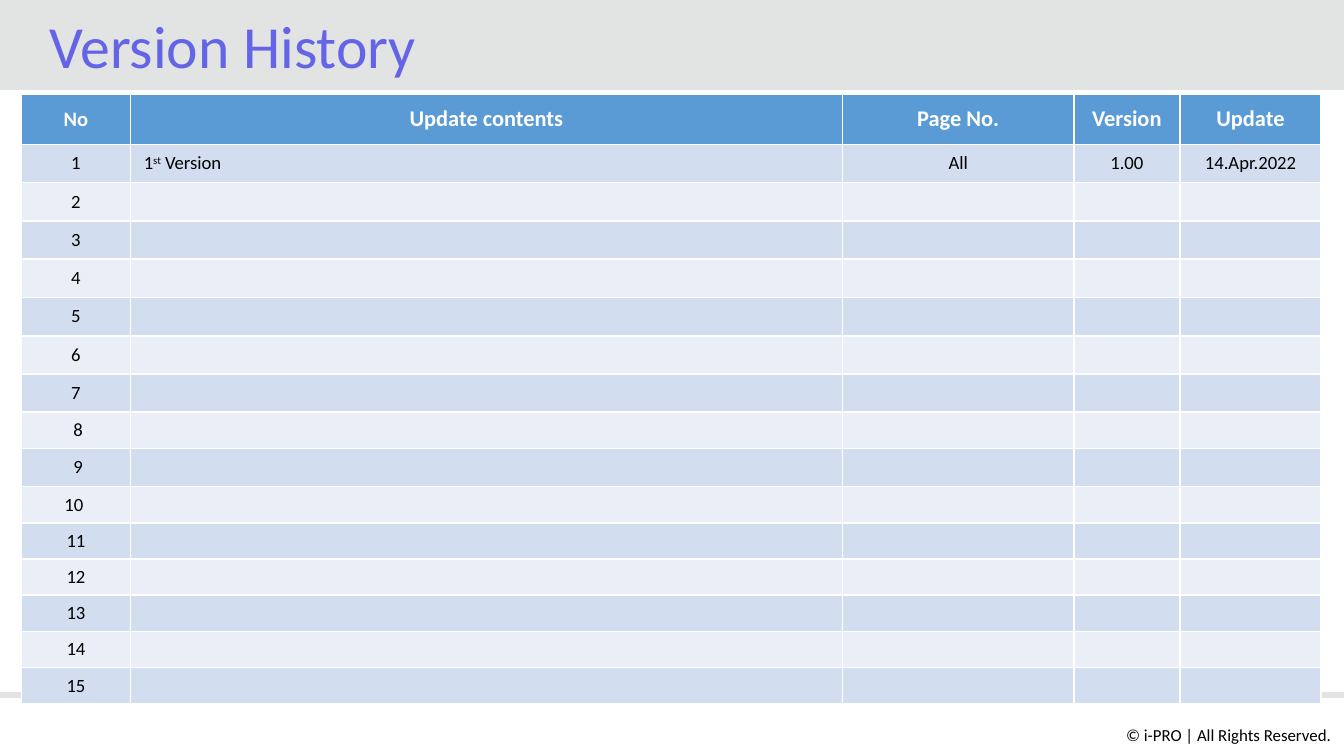
import pptx
import pptx.dml.color
import pptx.enum.shapes
import pptx.enum.text
import pptx.oxml
import pptx.util

Inches, Pt = pptx.util.Inches, pptx.util.Pt
ALIGN = pptx.enum.text.PP_ALIGN
MIDDLE = pptx.enum.text.MSO_ANCHOR.MIDDLE

TITLE = "Version History"
COPYRIGHT = "© i-PRO | All Rights Reserved."
HEADERS = ["No", "Update contents", "Page No.", "Version", "Update"]
NUMBERS = ["1", "2", "3", "4", "5", "6", "7", " 8", " 9", "10 ",
           "11", "12", "13", "14", "15"]
VERSIONS = [[(("1", 0), ("st", 30), (" Version", 0)), "All", "1.00", "14.Apr.2022"]]

COLORS = {
    "band": "E2E3E3", "title": "6464E6", "header": "5B9BD5",
    "odd": "D2DEEF", "even": "EAEFF7", "white": "FFFFFF", "black": "000000",
}
SLIDE_W = 10
SLIDE_H = SLIDE_W * 9 / 16
BAND_H = 0.67
RULE_Y = 5.17
TABLE_X, TABLE_Y = 0.16, 0.7
COLS = [0.81, 5.3, 1.72, 0.79, 1.05]
ROW_POINTS = [27] + [20.5] * 7 + [19.4, 20.5] + [19.4] * 6


def rgb(name):
    return pptx.dml.color.RGBColor.from_string(COLORS[name])


def style(p, size, color, align=ALIGN.LEFT, bold=False):
    p.alignment = align
    p.font.name = "Calibri"
    p.font.size = Pt(size)
    p.font.bold = bold
    p.font.color.rgb = rgb(color)


def add_text(slide, box, text, size, color, align, wrap):
    tf = slide.shapes.add_textbox(*map(Inches, box)).text_frame
    tf.word_wrap = wrap
    p = tf.paragraphs[0]
    p.text = text
    style(p, size, color, align)
    return tf


def fill_cell(cell, content, fill, size, color, align, bold):
    cell.fill.solid()
    cell.fill.fore_color.rgb = rgb(fill)
    cell.vertical_anchor = MIDDLE
    p = cell.text_frame.paragraphs[0]
    runs = ((content, 0),) if isinstance(content, str) else content
    for text, baseline in runs:
        if text:
            r = p.add_run()
            r.text = text
            if baseline:
                r.font._element.set("baseline", str(baseline * 1000))
    style(p, size, color, align, bold)
    p._p.get_or_add_endParaRPr().set("sz", str(size * 100))


prs = pptx.Presentation()
prs.slide_width, prs.slide_height = Inches(SLIDE_W), Inches(SLIDE_H)
slide = prs.slides.add_slide(prs.slide_layouts[6])

band = slide.shapes.add_shape(
    pptx.enum.shapes.MSO_SHAPE.RECTANGLE, 0, 0, prs.slide_width, Inches(BAND_H))
band.shadow.inherit = False
band.fill.solid()
band.fill.fore_color.rgb = rgb("band")
band.line.fill.background()

add_text(slide, (8.25, 5.34, 1.75, 0.25), COPYRIGHT, 9, "black", ALIGN.RIGHT, False)

rule = slide.shapes.add_connector(
    pptx.enum.shapes.MSO_CONNECTOR.STRAIGHT,
    0, Inches(RULE_Y), prs.slide_width, Inches(RULE_Y))
rule.line.color.rgb = rgb("band")
rule.line.width = Pt(3)
rule._element.spPr.append(pptx.oxml.parse_xml(
    '<a:effectLst xmlns:a="http://schemas.openxmlformats.org/drawingml/2006/main"/>'))

table = slide.shapes.add_table(
    len(ROW_POINTS), len(COLS), Inches(TABLE_X), Inches(TABLE_Y),
    Inches(sum(COLS)), Pt(sum(ROW_POINTS))).table
for col, width in zip(table.columns, COLS):
    col.width = Inches(width)
for row, height in zip(table.rows, ROW_POINTS):
    row.height = Pt(height)

for c, text in enumerate(HEADERS):
    size = 11 if c == 0 else 12
    fill_cell(table.cell(0, c), text, "header", size, "white", ALIGN.CENTER, True)

blank = [""] * (len(COLS) - 1)
for n, number in enumerate(NUMBERS, 1):
    entry = VERSIONS[n - 1] if n <= len(VERSIONS) else blank
    for c, content in enumerate([number] + entry):
        align = ALIGN.LEFT if c == 1 else ALIGN.CENTER
        fill = "odd" if n % 2 else "even"
        fill_cell(table.cell(n, c), content, fill, 10, "black", align, False)

tf = add_text(slide, (0.27, 0.01, 9.34, 0.66), TITLE, 32, "title", ALIGN.LEFT, True)
tf.vertical_anchor = MIDDLE
tf.margin_bottom = 0
tf.paragraphs[0].line_spacing = 0.9

prs.save("out.pptx")
